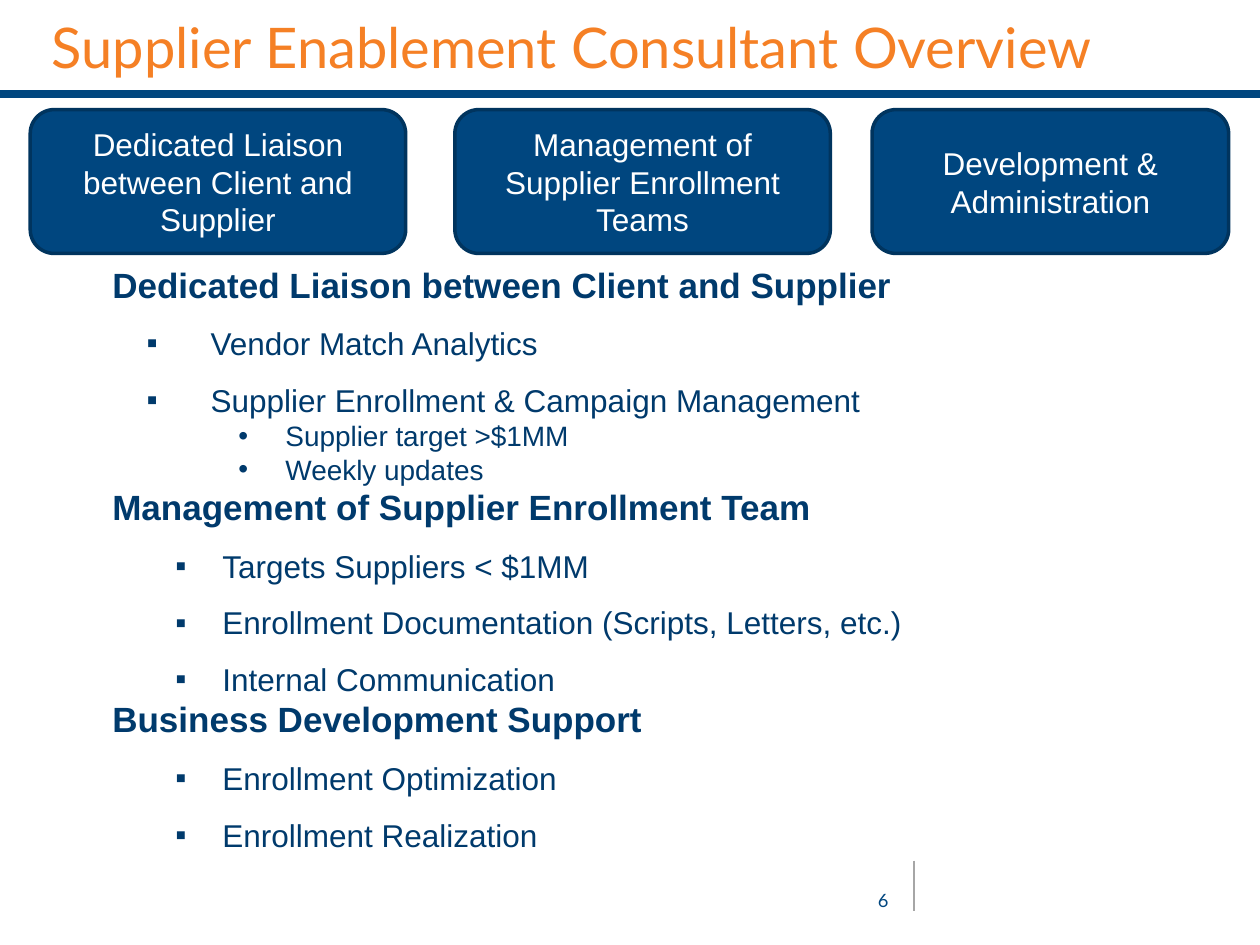
"""Build the supplier enablement consultant overview slide."""
from lxml.etree import SubElement
from pptx import Presentation
from pptx.dml.color import RGBColor
from pptx.enum.shapes import MSO_CONNECTOR as Connector, MSO_SHAPE as Shape
from pptx.enum.text import MSO_ANCHOR as Anchor, MSO_AUTO_SIZE as AutoSize, PP_ALIGN as Align
from pptx.oxml.ns import qn
from pptx.util import Cm, Pt

COLORS = {"orange": "F58025", "blue": "00467F", "edge": "00345E",
          "text": "003A6C", "gray": "A6A6A6", "white": "FFFFFF"}

CARDS = [
    ("Dedicated Liaison between Client and Supplier", 0.61, 7.57),
    ("Management of Supplier Enrollment Teams", 9.17, 7.57),
    ("Development & Administration", 17.58, 7.19),
]

STYLES = {
    "heading": dict(size=20, bold=True, level=0, margin=0, hang=0, spacing=1, bullet=None),
    "wide": dict(size=18, bold=False, level=1, margin=1.98, hang=1.29, spacing=1.5, bullet="▪"),
    "item": dict(size=18, bold=False, level=1, margin=2.22, hang=0.95, spacing=1.5, bullet="▪"),
    "detail": dict(size=16, bold=False, level=2, margin=3.49, hang=0.95, spacing=1, bullet="•"),
}

OUTLINE = [
    ("heading", "Dedicated Liaison between Client and Supplier"),
    ("wide", "Vendor Match Analytics"),
    ("wide", "Supplier Enrollment & Campaign Management"),
    ("detail", "Supplier target >$1MM"),
    ("detail", "Weekly updates"),
    ("heading", "Management of Supplier Enrollment Team"),
    ("item", "Targets Suppliers < $1MM"),
    ("item", "Enrollment Documentation (Scripts, Letters, etc.)"),
    ("item", "Internal Communication"),
    ("heading", "Business Development Support"),
    ("item", "Enrollment Optimization"),
    ("item", "Enrollment Realization"),
]


def rgb(name):
    return RGBColor.from_string(COLORS[name])


def apply(target, **values):
    for attribute, value in values.items():
        setattr(target, attribute, value)


def place(part, left, top, width, height):
    apply(part, left=Cm(left), top=Cm(top), width=Cm(width), height=Cm(height))


def style_font(paragraph, color, size, name="Arial", bold=False):
    apply(paragraph.font, name=name, size=Pt(size), bold=bold)
    paragraph.font.color.rgb = rgb(color)


def add_rule(slide, start, end, color, weight):
    rule = slide.shapes.add_connector(Connector.STRAIGHT, *map(Cm, start + end))
    rule.line.color.rgb = rgb(color)
    rule.line.width = Pt(weight)
    SubElement(rule._element.spPr, qn("a:effectLst"))


def fill_title(title):
    place(title, 0.79, 0.08, 22.48, 1.7)
    apply(title.text_frame, text="Supplier Enablement Consultant Overview",
          vertical_anchor=Anchor.MIDDLE, auto_size=AutoSize.NONE)
    heading = title.text_frame.paragraphs[0]
    heading.alignment = Align.LEFT
    style_font(heading, "orange", 32, "Lato")


def add_card(slide, label, left, width):
    card = slide.shapes.add_shape(Shape.ROUNDED_RECTANGLE, Cm(left), Cm(2.21), Cm(width), Cm(2.9))
    card.shadow.inherit = False
    card.fill.solid()
    card.fill.fore_color.rgb = rgb("blue")
    card.line.color.rgb = rgb("edge")
    card.line.width = Pt(2)
    apply(card.text_frame, text=label, word_wrap=True, vertical_anchor=Anchor.MIDDLE)
    caption = card.text_frame.paragraphs[0]
    caption.alignment = Align.CENTER
    style_font(caption, "white", 18)


def set_bullet(paragraph, mark, margin, hang):
    properties = paragraph._p.get_or_add_pPr()
    properties.set("marL", str(Cm(margin)))
    properties.set("indent", str(-Cm(hang)))
    if mark:
        SubElement(properties, qn("a:buFont"), typeface="Arial")
        SubElement(properties, qn("a:buChar"), char=mark)
    else:
        SubElement(properties, qn("a:buNone"))


def fill_outline(body):
    place(body, 2.01, 5.18, 21.72, 12.3)
    frame = body.text_frame
    apply(frame, word_wrap=True, vertical_anchor=Anchor.TOP, auto_size=AutoSize.NONE)
    frame.text = "\n".join(text for _, text in OUTLINE)
    for entry, (kind, _) in zip(frame.paragraphs, OUTLINE):
        style = STYLES[kind]
        apply(entry, level=style["level"], line_spacing=style["spacing"],
              space_before=Pt(0), space_after=Pt(0), alignment=Align.LEFT)
        set_bullet(entry, style["bullet"], style["margin"], style["hang"])
        style_font(entry, "text", style["size"], bold=style["bold"])


def add_page_number(slide, number):
    box = slide.shapes.add_textbox(Cm(17.17), Cm(17.81), Cm(0.99), Cm(0.74))
    apply(box.text_frame, text=number, word_wrap=False)
    page = box.text_frame.paragraphs[0]
    page.alignment = Align.RIGHT
    style_font(page, "blue", 10.5, "Lato")


def main():
    deck = Presentation()
    apply(deck, slide_width=Cm(25.4), slide_height=Cm(19.05))
    slide = deck.slides.add_slide(deck.slide_layouts[1])
    title, body = slide.placeholders
    add_rule(slide, (0, 1.9), (25.4, 1.9), "blue", 4.5)
    add_rule(slide, (18.42, 17.35), (18.42, 18.36), "gray", 1.25)
    add_page_number(slide, "6")
    fill_title(title)
    for card in CARDS:
        add_card(slide, *card)
    fill_outline(body)
    deck.save("out.pptx")


if __name__ == "__main__":
    main()
